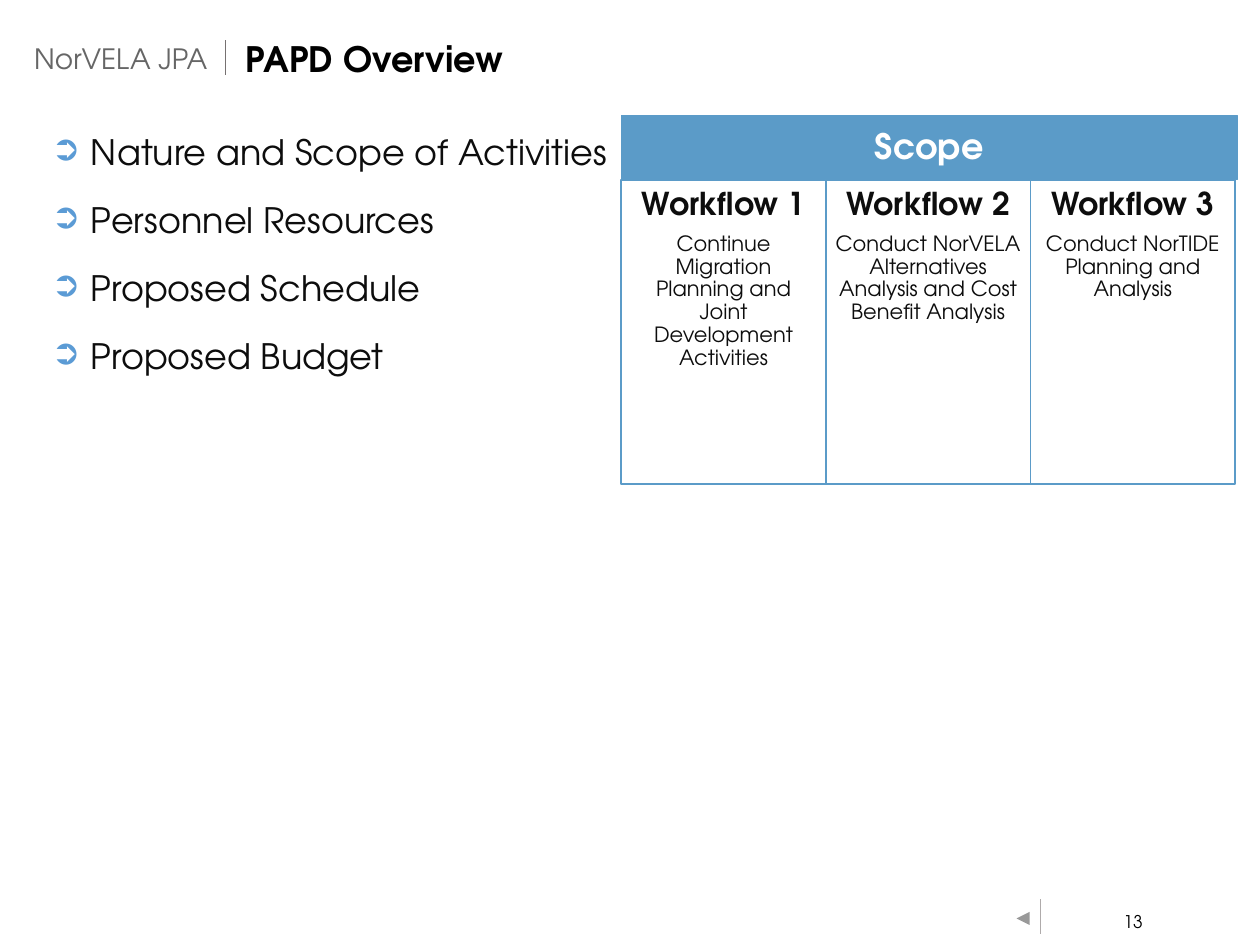
from lxml.etree import SubElement
from pptx import Presentation
from pptx.dml.color import RGBColor
from pptx.enum.shapes import MSO_CONNECTOR, MSO_SHAPE
from pptx.enum.text import MSO_ANCHOR, PP_ALIGN
from pptx.oxml.ns import qn
from pptx.util import Pt

FONT = "TeX Gyre Adventor"
BLACK = RGBColor(0x00, 0x00, 0x00)
WHITE = RGBColor(0xFF, 0xFF, 0xFF)
INK = RGBColor(0x0D, 0x0D, 0x0D)
GREY = RGBColor(0x66, 0x66, 0x66)
RULE_DARK = RGBColor(0x76, 0x71, 0x71)
RULE_LIGHT = RGBColor(0xAF, 0xAB, 0xAB)
BLUE = RGBColor(0x5B, 0x9B, 0xC8)
BULLET_BLUE = RGBColor(0x5B, 0x9B, 0xD5)

TOPICS = [
    "Nature and Scope of Activities",
    "Personnel Resources",
    "Proposed Schedule",
    "Proposed Budget",
]
WORKFLOWS = [
    ("Workflow 1", "Continue Migration Planning and Joint Development Activities"),
    ("Workflow 2", "Conduct NorVELA Alternatives Analysis and Cost Benefit Analysis"),
    ("Workflow 3", "Conduct NorTIDE Planning and Analysis"),
]


def write(frame, text, size=20, color=INK, bold=False, align=PP_ALIGN.LEFT,
          spacing=1.0, before=0, after=0):
    para = frame.paragraphs[0]
    if para.runs:
        para = frame.add_paragraph()
    para.alignment = align
    para.line_spacing = spacing
    para.space_before = Pt(before)
    para.space_after = Pt(after)
    span = para.add_run()
    span.text = text
    span.font.name = FONT
    span.font.size = Pt(size)
    span.font.bold = bold
    span.font.color.rgb = color
    return para


def set_frame(frame, insets, anchor=MSO_ANCHOR.TOP, wrap=True):
    frame.word_wrap = wrap
    frame.vertical_anchor = anchor
    left, top, right, bottom = insets
    frame.margin_left, frame.margin_right = Pt(left), Pt(right)
    frame.margin_top, frame.margin_bottom = Pt(top), Pt(bottom)
    return frame


def add_text_frame(slide, box, insets, anchor=MSO_ANCHOR.TOP, wrap=True):
    shape = slide.shapes.add_textbox(*map(Pt, box))
    return set_frame(shape.text_frame, insets, anchor, wrap)


def add_panel(slide, box, fill, line_width, inset, anchor):
    panel = slide.shapes.add_shape(MSO_SHAPE.RECTANGLE, *map(Pt, box))
    panel.shadow.inherit = False
    panel.fill.solid()
    panel.fill.fore_color.rgb = fill
    panel.line.color.rgb = BLUE
    panel.line.width = Pt(line_width)
    return set_frame(panel.text_frame, (inset,) * 4, anchor)


def add_rule(slide, x, top, height, color):
    rule = slide.shapes.add_connector(
        MSO_CONNECTOR.STRAIGHT, Pt(x), Pt(top), Pt(x), Pt(top + height))
    rule.line.color.rgb = color
    rule.line.width = Pt(0.5)
    SubElement(rule._element.spPr, qn("a:effectLst"))


def add_bullet(para, indent):
    properties = para._p.get_or_add_pPr()
    properties.set("marL", str(Pt(indent)))
    properties.set("indent", str(-Pt(indent)))
    color = SubElement(properties, qn("a:buClr"))
    SubElement(color, qn("a:srgbClr"), val=str(BULLET_BLUE))
    SubElement(properties, qn("a:buFont"), typeface=FONT)
    SubElement(properties, qn("a:buChar"), char="➲")


def add_header(slide, left, top, width, height):
    insets = (0, 3.6, 0, 3.6)
    owner = add_text_frame(slide, (left, top, 172, height), insets, MSO_ANCHOR.MIDDLE)
    write(owner, "NorVELA JPA", size=16, color=GREY)
    add_rule(slide, left + 109.5, top + 2.8, 20, RULE_DARK)
    offset = 121
    title = add_text_frame(
        slide, (left + offset, top + 1.2, width - offset, height), insets, MSO_ANCHOR.MIDDLE)
    write(title, "PAPD Overview", color=BLACK, bold=True, spacing=0.9)


def add_topics(slide, left, top, width, height):
    frame = add_text_frame(slide, (left, top, width, height), (7.2, 3.6, 0, 3.6))
    for topic in TOPICS:
        add_bullet(write(frame, topic, spacing=1.2, before=10), 22.5)


def add_scope(slide, left, top, width, height):
    header_height = 36.5
    header = add_panel(slide, (left, top, width, header_height), BLUE, 0.75, 7.2,
                       MSO_ANCHOR.MIDDLE)
    write(header, "Scope", color=WHITE, bold=True, align=PP_ALIGN.CENTER,
          spacing=0.9, after=7)
    column_width = (width - 1.2) / len(WORKFLOWS)
    for index, (name, detail) in enumerate(WORKFLOWS):
        box = (left + index * column_width, top + header_height,
               column_width, height - header_height)
        column = add_panel(slide, box, WHITE, 1, 5, MSO_ANCHOR.TOP)
        write(column, name, size=18, bold=True, align=PP_ALIGN.CENTER,
              spacing=0.9, after=6.3)
        write(column, detail, size=12, align=PP_ALIGN.CENTER, spacing=0.9, after=1.8)


def add_footer(slide, left, top, width, height):
    button = slide.shapes.add_shape(
        MSO_SHAPE.ACTION_BUTTON_FORWARD_OR_NEXT, Pt(left), Pt(top + 4.3), Pt(10), Pt(13))
    button.rotation = 180
    button.shadow.inherit = False
    button.fill.solid()
    button.fill.fore_color.rgb = WHITE
    button.line.fill.background()
    add_rule(slide, left + 15.1, top, height, RULE_LIGHT)
    number_width = 23
    number = add_text_frame(
        slide, (left + width - number_width, top + 3.6, number_width, 17.3),
        (5.8, 2.9, 5.8, 2.9), wrap=False)
    write(number, "13", size=10, color=BLACK, align=PP_ALIGN.RIGHT)


def main():
    deck = Presentation()
    deck.slide_width, deck.slide_height = Pt(720), Pt(540)
    slide = deck.slides.add_slide(deck.slide_layouts[6])
    add_footer(slide, 579.6, 514, 79.2, 20)
    add_header(slide, 19.5, 20.2, 639.3, 26.6)
    add_topics(slide, 22.3, 66.2, 332.7, 445.7)
    add_scope(slide, 355, 66.2, 352, 210.3)
    deck.save("out.pptx")


if __name__ == "__main__":
    main()
